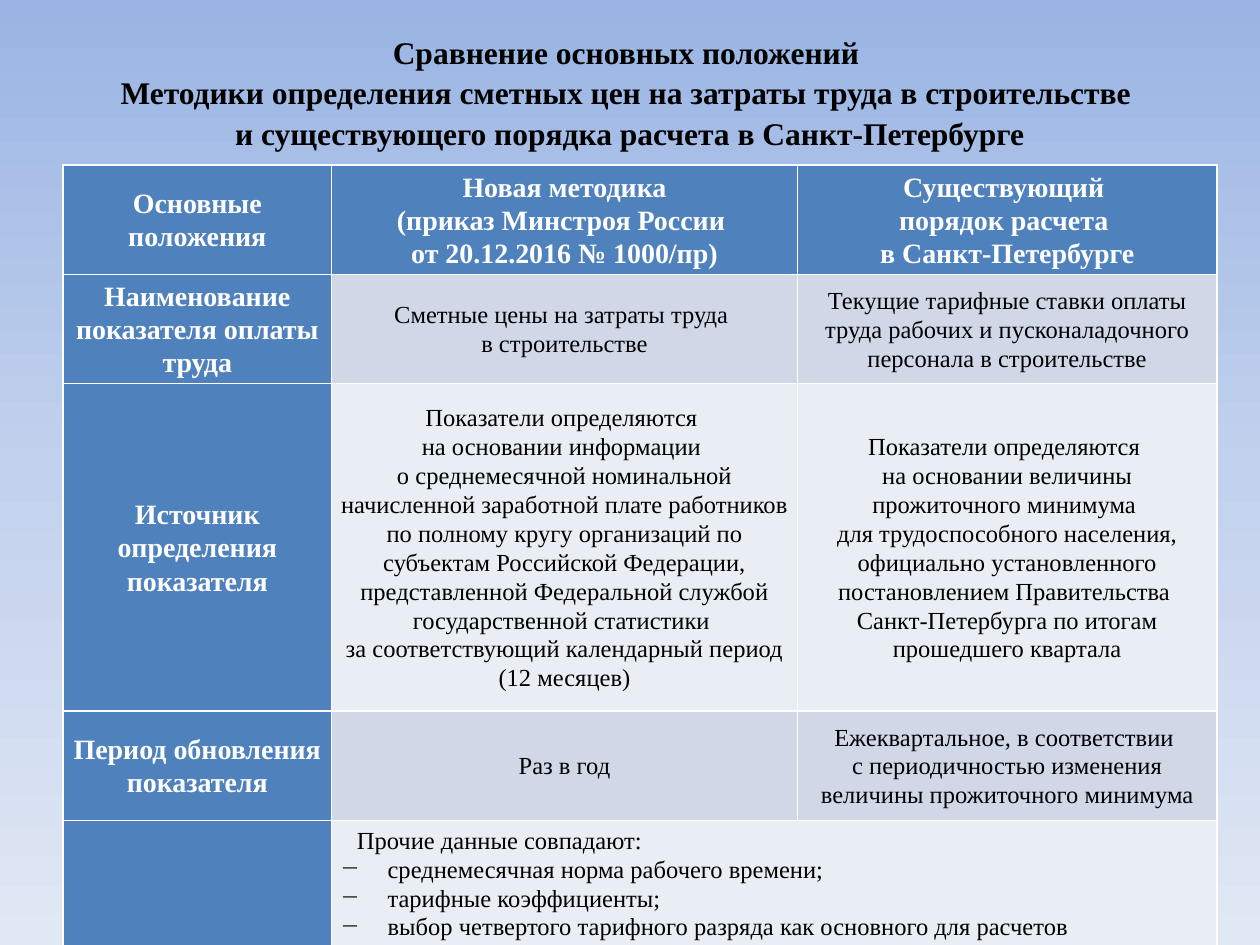
from copy import deepcopy

from lxml import etree
from pptx import Presentation
from pptx.dml.color import RGBColor
from pptx.enum.text import MSO_ANCHOR, PP_ALIGN
from pptx.oxml.ns import qn
from pptx.util import Pt

CENTER, LEFT = PP_ALIGN.CENTER, PP_ALIGN.LEFT
MIDDLE = MSO_ANCHOR.MIDDLE

BLACK = RGBColor(0, 0, 0)
WHITE = RGBColor(255, 255, 255)
BLUE = RGBColor(0x4F, 0x81, 0xBD)
BAND_DARK = RGBColor(0xD0, 0xD8, 0xE8)
BAND_LIGHT = RGBColor(0xE9, 0xED, 0xF4)
SKY = [RGBColor(0x9A, 0xB5, 0xE4), RGBColor(0xC2, 0xD1, 0xED),
       RGBColor(0xE1, 0xE8, 0xF5)]

FONT = "Times New Roman"
LINE_SPACING = 1.07

# "\v" is a line break, "\n" starts a new paragraph
TITLE = ("Сравнение основных положений \v"
         "Методики определения сметных цен на затраты труда в строительстве \v"
         "и существующего порядка расчета в Санкт-Петербурге")
ROWS = [
    ["Основные положения",
     "Новая методика\n(приказ Минстроя России \nот 20.12.2016 № 1000/пр)",
     "Существующий \nпорядок расчета \vв Санкт-Петербурге"],
    ["Наименование показателя оплаты труда",
     "Сметные цены на затраты труда \vв строительстве",
     "Текущие тарифные ставки оплаты труда рабочих и пусконаладочного "
     "персонала в строительстве"],
    ["Источник определения показателя",
     "Показатели определяются \vна основании информации \v"
     "о среднемесячной номинальной начисленной заработной плате работников "
     "по полному кругу организаций по субъектам Российской Федерации, "
     "представленной Федеральной службой государственной статистики \v"
     "за соответствующий календарный период (12 месяцев)",
     "Показатели определяются \vна основании величины прожиточного минимума \v"
     "для трудоспособного населения, официально установленного "
     "постановлением Правительства \v"
     "Санкт-Петербурга по итогам прошедшего квартала"],
    ["Период обновления показателя",
     "Раз в год",
     "Ежеквартальное, в соответствии \v"
     "с периодичностью изменения величины прожиточного минимума"],
    ["",
     "Прочие данные совпадают:\n"
     "среднемесячная норма рабочего времени;\n"
     "тарифные коэффициенты;\n"
     "выбор четвертого тарифного разряда как основного для расчетов",
     ""],
]
COL_WIDTHS = [153.5, 266.2, 239.8]
ROW_HEIGHTS = [62.4, 62.4, 187.2, 62.4, 67]


def paint_background(s):
    fill = s.background.fill
    fill.gradient()
    fill.gradient_angle = 270
    first = fill.gradient_stops[0]._gs
    first.addnext(deepcopy(first))
    for i, (stop, color) in enumerate(zip(fill.gradient_stops, SKY)):
        stop.color.rgb = color
        stop.position = i / 2


def style_text(tf, size, color, bold, align=CENTER):
    for p in tf.paragraphs:
        p.alignment = align
        p.line_spacing = LINE_SPACING
        p.font.name = FONT
        p.font.size = Pt(size)
        p.font.bold = bold
        p.font.color.rgb = color


def indent(p, margin, first_line, bullet=None):
    pPr = p._p.get_or_add_pPr()
    pPr.set("marL", str(Pt(margin)))
    pPr.set("indent", str(Pt(first_line)))
    if bullet:
        bu = etree.Element(qn("a:buChar"), char=bullet)
        pPr.find(qn("a:defRPr")).addprevious(bu)


def add_title(s, x, y, w, h):
    tf = s.shapes.add_textbox(Pt(x), Pt(y), Pt(w), Pt(h)).text_frame
    tf.word_wrap = True
    tf.vertical_anchor = MIDDLE
    tf.text = TITLE
    style_text(tf, 18, BLACK, True)


def fill_cell(cell, text, row, col):
    heading = row == 0 or col == 0
    cell.margin_left = cell.margin_right = Pt(5)
    cell.margin_top = cell.margin_bottom = 0
    cell.vertical_anchor = MIDDLE
    cell.fill.solid()
    if heading:
        cell.fill.fore_color.rgb = BLUE
    else:
        cell.fill.fore_color.rgb = BAND_DARK if row % 2 else BAND_LIGHT
    cell.text = text
    if heading:
        style_text(cell.text_frame, 16, WHITE, True)
    else:
        style_text(cell.text_frame, 14, BLACK, False)


def add_comparison(s, x, y, w, h):
    table = s.shapes.add_table(len(ROWS), len(COL_WIDTHS),
                               Pt(x), Pt(y), Pt(w), Pt(h)).table
    table.first_col = True
    for column, width in zip(table.columns, COL_WIDTHS):
        column.width = Pt(width)
    for row, height in zip(table.rows, ROW_HEIGHTS):
        row.height = Pt(height)
    for r, texts in enumerate(ROWS):
        for c, text in enumerate(texts):
            fill_cell(table.cell(r, c), text, r, c)

    last = len(ROWS) - 1
    common = table.cell(last, 1)
    common.merge(table.cell(last, 2))
    style_text(common.text_frame, 14, BLACK, False, LEFT)
    intro, *items = common.text_frame.paragraphs
    indent(intro, 0, 9.4)
    for p in items:
        indent(p, 27, -27, "−")


def main():
    prs = Presentation()
    prs.slide_width, prs.slide_height = Pt(720), Pt(540)
    s = prs.slides.add_slide(prs.slide_layouts[6])
    paint_background(s)
    add_title(s, 36, 9.4, 648, 85)
    add_comparison(s, 36, 94.4, sum(COL_WIDTHS), sum(ROW_HEIGHTS))
    prs.save("out.pptx")


if __name__ == "__main__":
    main()
